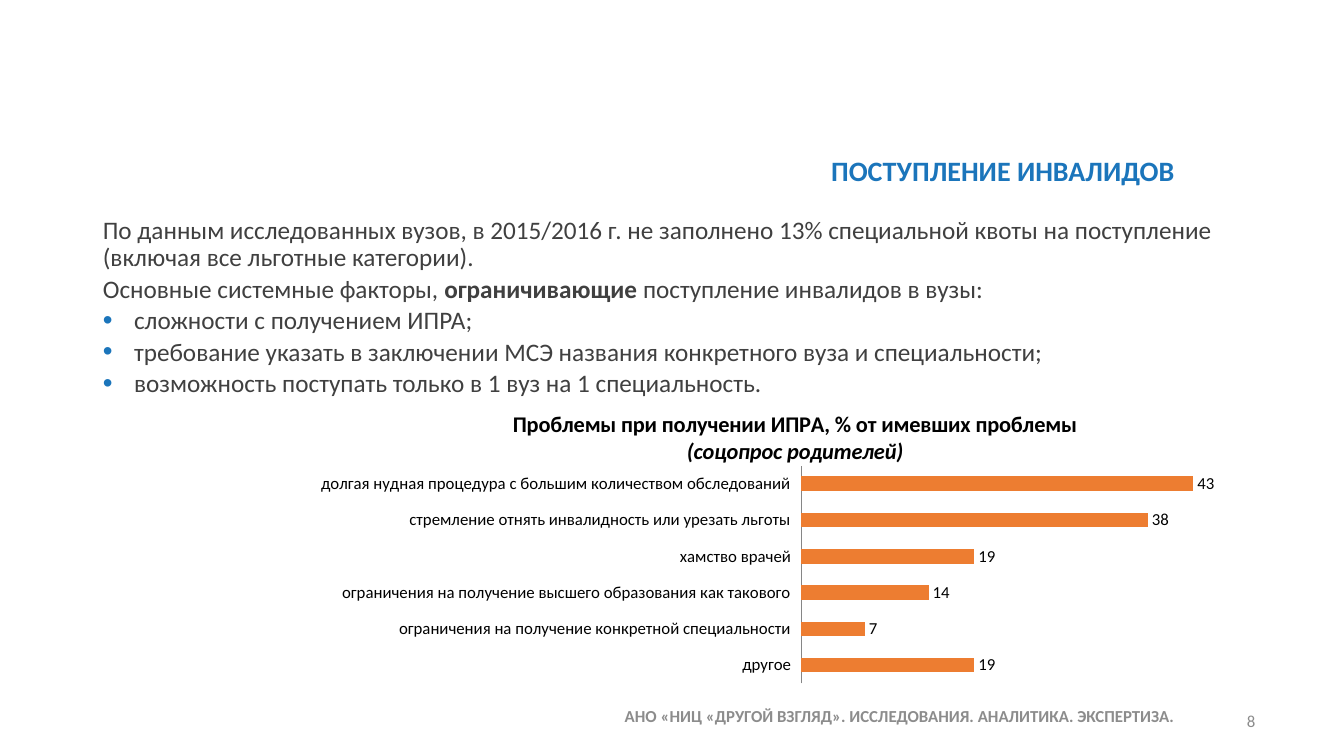
from dataclasses import dataclass
from pptx import Presentation
from pptx.chart.data import CategoryChartData
from pptx.dml.color import RGBColor
from pptx.enum.chart import XL_CHART_TYPE as ChartType, XL_LABEL_POSITION as LabelPosition
from pptx.enum.chart import XL_TICK_LABEL_POSITION as TickLabels, XL_TICK_MARK as TickMark
from pptx.enum.text import MSO_ANCHOR as Anchor, MSO_AUTO_SIZE as AutoSize, PP_ALIGN as Align
from pptx.oxml import parse_xml
from pptx.oxml.ns import nsdecls
from pptx.util import Inches, Pt

# Content
TITLE = "ПОСТУПЛЕНИЕ ИНВАЛИДОВ"
INTRO = [
    [("По данным исследованных вузов, в 2015/2016 г. не заполнено 13% специальной "
      "квоты на поступление (включая все льготные категории).", False)],
    [("Основные системные факторы, ", False), ("ограничивающие", True),
     (" поступление инвалидов в вузы:", False)],
]
FACTORS = [
    "сложности с получением ИПРА;",
    "требование указать в заключении МСЭ названия конкретного вуза и специальности;",
    "возможность поступать только в 1 вуз на 1 специальность.",
]
CHART_TITLE = ["Проблемы при получении ИПРА, % от имевших проблемы", "(соцопрос родителей)"]
PROBLEMS = {
    "долгая нудная процедура с большим количеством обследований": 43,
    "стремление отнять инвалидность или урезать льготы": 38,
    "хамство врачей": 19,
    "ограничения на получение высшего образования как такового": 14,
    "ограничения на получение конкретной специальности": 7,
    "другое": 19,
}
FOOTER = "АНО «НИЦ «ДРУГОЙ ВЗГЛЯД». ИССЛЕДОВАНИЯ. АНАЛИТИКА. ЭКСПЕРТИЗА."
PAGE = "8"


@dataclass(frozen=True)
class Theme:
    font: str = "Calibri"
    accent: str = "1B75BB"
    text: str = "404040"
    muted: str = "8C8C8C"
    chart_text: str = "000000"
    bar: str = "ED7D31"
    axis: str = "868686"
    title_size: int = 20
    body_size: int = 18
    chart_title_size: int = 16
    small_size: int = 12


THEME = Theme()

# Layout in inches: shared edges of the text column and the footer row
WIDTH, HEIGHT = 13.33, 7.5
LEFT, TITLE_RIGHT, RIGHT = 0.92, 11.75, 12.78
FOOTER_TOP, FOOTER_HEIGHT = 6.95, 0.4
BOXES = {
    "title": (LEFT, 1.58, TITLE_RIGHT - LEFT, 0.27),
    "body": (LEFT, 2.11, RIGHT - LEFT, 4.65),
    "footer": (4.42, FOOTER_TOP, TITLE_RIGHT - 4.42, FOOTER_HEIGHT),
    "page": (12.04, FOOTER_TOP, RIGHT - 12.04, FOOTER_HEIGHT),
    "chart": (3.13, 3.88, 9.63, 2.96),
}
INDENT = Inches(0.31)


def box(name):
    return [Inches(length) for length in BOXES[name]]


def style(font, size, color, **extra):
    values = {"name": THEME.font, "size": Pt(size), **extra}
    for attribute, value in values.items():
        setattr(font, attribute, value)
    font.color.rgb = RGBColor.from_string(color)


def place(shape, name, anchor=Anchor.TOP):
    shape.left, shape.top, shape.width, shape.height = box(name)
    frame = shape.text_frame
    values = {"word_wrap": True, "auto_size": AutoSize.NONE, "vertical_anchor": anchor}
    for attribute, value in values.items():
        setattr(frame, attribute, value)
    return frame


def set_bullet(paragraph, bulleted):
    properties = paragraph._p.get_or_add_pPr()
    properties.set("marL", str(INDENT if bulleted else 0))
    properties.set("indent", str(-INDENT if bulleted else 0))
    parts = ['<a:buNone {}/>']
    if bulleted:
        parts = [f'<a:buClr {{}}><a:srgbClr val="{THEME.accent}"/></a:buClr>',
                 '<a:buSzPct {} val="110000"/>',
                 '<a:buFont {} typeface="Arial"/>',
                 '<a:buChar {} char="•"/>']
    for part in parts:
        properties.append(parse_xml(part.format(nsdecls("a"))))


def manual_layout(x, y, size=None):
    tags = [("xMode", "edge"), ("yMode", "edge"), ("x", x), ("y", y)]
    if size:
        tags = [("layoutTarget", "inner"), *tags, ("w", size[0]), ("h", size[1])]
    inner = "".join(f'<c:{tag} val="{value}"/>' for tag, value in tags)
    return parse_xml(f'<c:layout {nsdecls("c")}><c:manualLayout>{inner}</c:manualLayout></c:layout>')


def drop_layout(element):
    for layout in element.xpath("./c:layout"):
        element.remove(layout)


def add_line(frame, text, align, size, color, **extra):
    paragraph = frame.paragraphs[0]
    paragraph.alignment = align
    run = paragraph.add_run()
    run.text = text
    style(run.font, size, color, **extra)
    return paragraph


def add_body(frame):
    lines = [(runs, False) for runs in INTRO] + [([(text, False)], True) for text in FACTORS]
    for index, (runs, bulleted) in enumerate(lines):
        paragraph = frame.add_paragraph() if index else frame.paragraphs[0]
        set_bullet(paragraph, bulleted)
        paragraph.alignment = Align.LEFT
        paragraph.line_spacing = 0.9
        paragraph.space_before = Pt(3 if index else 0)
        for text, bold in runs:
            run = paragraph.add_run()
            run.text = text
            style(run.font, THEME.body_size, THEME.text, bold=bold)


def add_problem_chart(slide):
    data = CategoryChartData()
    data.categories = list(PROBLEMS)
    data.add_series("Проблемы", list(PROBLEMS.values()))
    chart = slide.shapes.add_chart(ChartType.BAR_CLUSTERED, *box("chart"), data).chart
    chart.has_legend = False
    style(chart.font, THEME.small_size, THEME.chart_text)

    # Two-line heading
    chart.has_title = True
    title = chart.chart_title
    for index, text in enumerate(CHART_TITLE):
        frame = title.text_frame
        paragraph = frame.add_paragraph() if index else frame.paragraphs[0]
        run = paragraph.add_run()
        run.text = text
        style(run.font, THEME.chart_title_size, THEME.chart_text, bold=True, italic=index == 1)
    drop_layout(title.element)
    title.element.xpath("./c:tx")[0].addnext(manual_layout(0.2, 0.05))

    # Plot area, axes and bars
    plot_area = chart.element.xpath(".//c:plotArea")[0]
    drop_layout(plot_area)
    plot_area.insert(0, manual_layout(0.5, 0.25, (0.47, 0.73)))
    categories, values = chart.category_axis, chart.value_axis
    for attribute, value in {"reverse_order": True, "major_tick_mark": TickMark.NONE,
                             "tick_label_position": TickLabels.LOW}.items():
        setattr(categories, attribute, value)
    style(categories.tick_labels.font, THEME.small_size, THEME.chart_text)
    categories.format.line.color.rgb = RGBColor.from_string(THEME.axis)
    for attribute, value in {"visible": False, "has_major_gridlines": False,
                             "minimum_scale": 0, "maximum_scale": 50}.items():
        setattr(values, attribute, value)
    plot = chart.plots[0]
    plot.gap_width, plot.vary_by_categories = 150, False
    fill = plot.series[0].format.fill
    fill.solid()
    fill.fore_color.rgb = RGBColor.from_string(THEME.bar)
    plot.has_data_labels = True
    labels = plot.data_labels
    labels.show_value, labels.position = True, LabelPosition.OUTSIDE_END
    style(labels.font, THEME.small_size, THEME.chart_text)


def main():
    presentation = Presentation()
    presentation.slide_width, presentation.slide_height = Inches(WIDTH), Inches(HEIGHT)
    slide = presentation.slides.add_slide(presentation.slide_layouts[1])

    # Title and body placeholders
    heading = add_line(place(slide.shapes.title, "title", Anchor.MIDDLE), TITLE, Align.RIGHT,
                       THEME.title_size, THEME.accent, bold=True)
    heading.line_spacing = 0.9
    add_body(place(slide.placeholders[1], "body"))

    # Footer row
    for name, text, align, anchor, bold in [
            ("footer", FOOTER, Align.RIGHT, Anchor.TOP, True),
            ("page", PAGE, Align.CENTER, Anchor.MIDDLE, False)]:
        frame = place(slide.shapes.add_textbox(*box(name)), name, anchor)
        add_line(frame, text, align, THEME.small_size, THEME.muted, bold=bold)

    add_problem_chart(slide)
    presentation.save("out.pptx")


if __name__ == "__main__":
    main()
